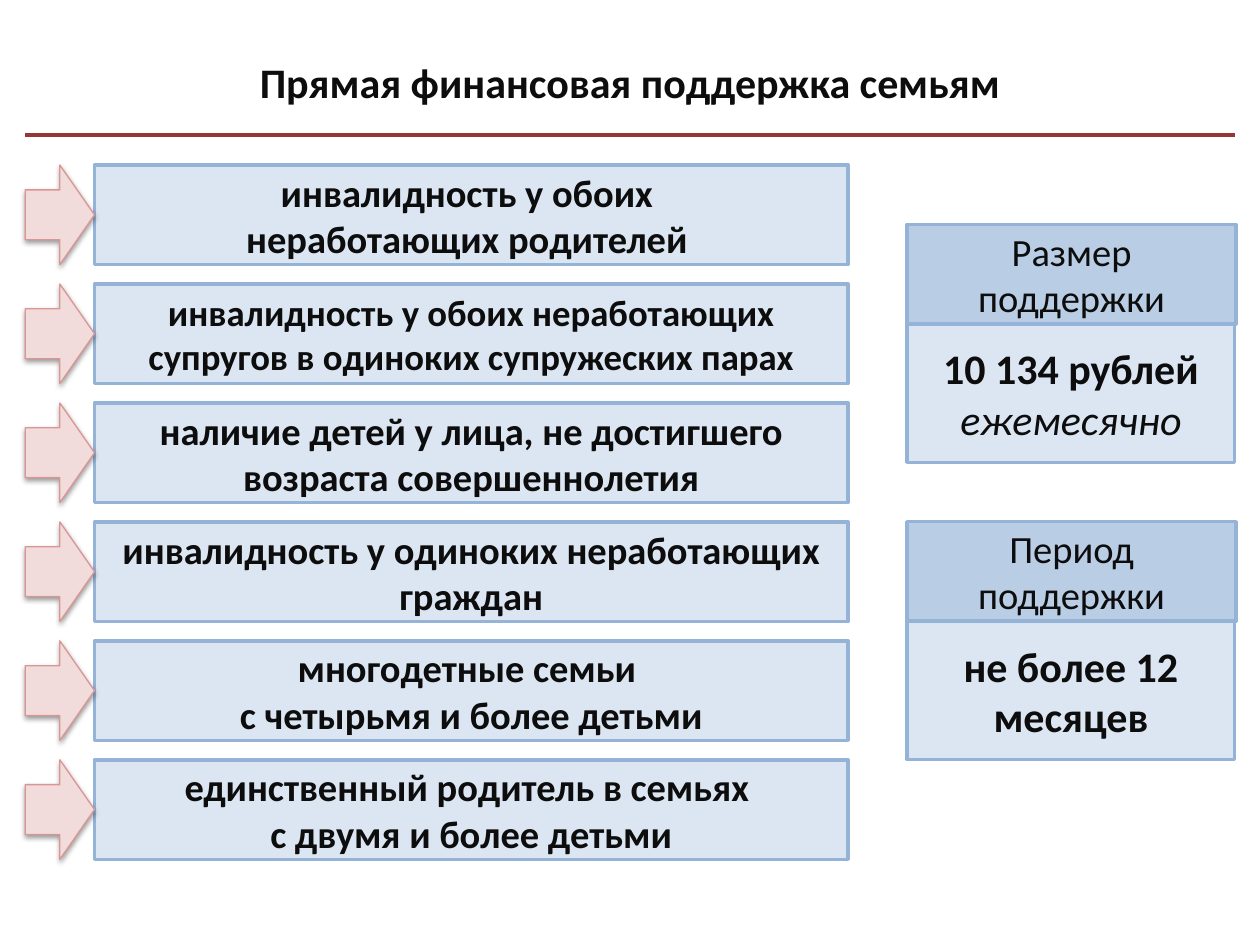
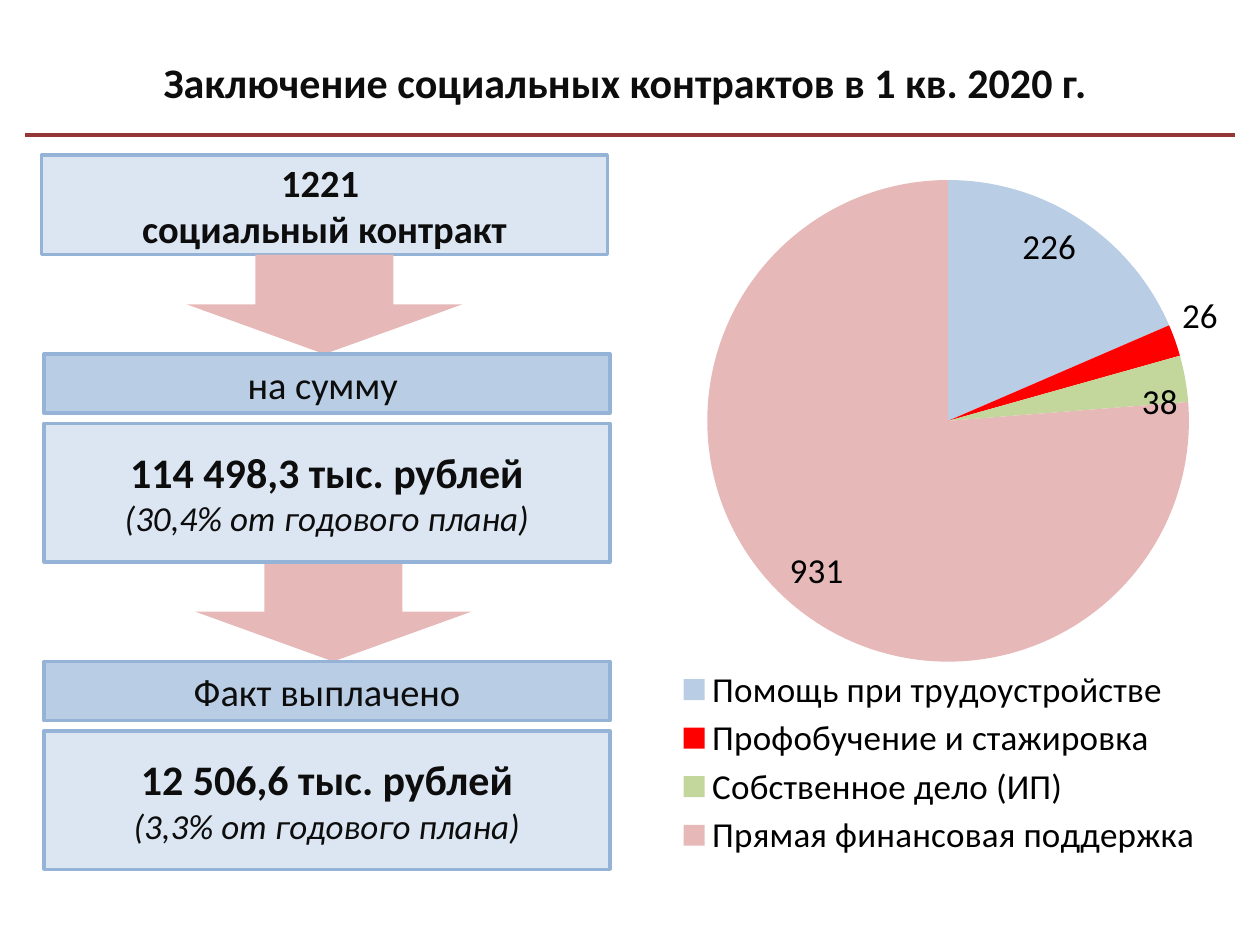
from lxml.etree import SubElement
from pptx import Presentation
from pptx.chart.data import CategoryChartData
from pptx.dml.color import RGBColor
from pptx.enum.chart import XL_CHART_TYPE, XL_LABEL_POSITION, XL_LEGEND_POSITION
from pptx.enum.shapes import MSO_CONNECTOR, MSO_SHAPE
from pptx.enum.text import MSO_ANCHOR, PP_ALIGN
from pptx.oxml import parse_xml
from pptx.oxml.ns import nsdecls, qn
from pptx.util import Inches, Pt

COLORS = {
    "text": "0D0D0D", "chart_text": "000000", "rule": "953735",
    "light_blue": "DCE6F2", "blue": "B9CDE5", "border": "95B3D7",
    "pale_pink": "F2DCDB", "pink_border": "D99694", "pink": "E6B9B8",
    "red": "FF0000", "green": "C3D69B",
}
FORMATS = {
    "title": {"size": Pt(24), "bold": True},
    "reason": {"size": Pt(22), "bold": True},
    "long_reason": {"size": Pt(21), "bold": True},
    "heading": {"size": Pt(22), "bold": False},
    "amount": {"size": Pt(24), "bold": True},
    "period": {"size": Pt(24), "bold": False, "italic": True},
    "share": {"size": Pt(20), "bold": False, "italic": True},
    "chart": {"size": Pt(20), "bold": False},
}
FONT = "Calibri"
COLUMNS, ROWS = 100, 75
BOX_HEIGHT, VALUE_HEIGHT, BAND_HEIGHT = 7.9, 11, 4.7
REASON_TOP, REASON_STEP = 13.1, 9.44


def color(name):
    """Return the named colour of the palette."""
    return RGBColor.from_string(COLORS[name])


class Deck:
    """Hold the shared style and the current slide."""

    def __init__(self):
        """Start an empty presentation of ten by seven and a half inches."""
        self.presentation = Presentation()
        self.presentation.slide_width = Inches(10)
        self.presentation.slide_height = Inches(7.5)
        self.slide = None

    def place(self, *lengths):
        """Turn alternating columns and rows into slide lengths."""
        units = (self.presentation.slide_width / COLUMNS,
                 self.presentation.slide_height / ROWS)
        return [round(length * units[index % 2]) for index, length in enumerate(lengths)]

    def format_font(self, font, style, color_name="text"):
        """Apply a named text format to a font."""
        for name, value in {"name": FONT, **FORMATS[style]}.items():
            setattr(font, name, value)
        font.color.rgb = color(color_name)

    def add_text(self, shape, paragraphs):
        """Fill a shape with centred paragraphs of (text, style) runs."""
        frame = shape.text_frame
        frame.word_wrap = True
        frame.vertical_anchor = MSO_ANCHOR.MIDDLE
        for index, runs in enumerate(paragraphs):
            paragraph = frame.add_paragraph() if index else frame.paragraphs[0]
            paragraph.alignment = PP_ALIGN.CENTER
            for text, style in runs:
                run = paragraph.add_run()
                run.text = text
                self.format_font(run.font, style)

    def add_slide(self, title):
        """Add a slide with its title and the rule below it."""
        self.slide = self.presentation.slides.add_slide(self.presentation.slide_layouts[5])
        placeholder = self.slide.shapes.title
        bounds = self.place(5, 3, 90, 6.9)
        for name, value in zip(("left", "top", "width", "height"), bounds):
            setattr(placeholder, name, value)
        self.add_text(placeholder, [[(title, "title")]])
        rule = self.slide.shapes.add_connector(
            MSO_CONNECTOR.STRAIGHT, *self.place(2, 10.7, 98, 10.7))
        rule.line.color.rgb = color("rule")
        rule.line.width = Pt(2.5)
        SubElement(rule._element.spPr, qn("a:effectLst"))

    def add_shape(self, kind, bounds, fill, border=None, width=2):
        """Add a filled preset shape without a shadow."""
        shape = self.slide.shapes.add_shape(kind, *self.place(*bounds))
        shape.shadow.inherit = False
        shape.fill.solid()
        shape.fill.fore_color.rgb = color(fill)
        if border:
            shape.line.color.rgb = color(border)
            shape.line.width = Pt(width)
        else:
            shape.line.fill.background()
        return shape

    def add_box(self, bounds, paragraphs, fill="light_blue"):
        """Add a bordered text box of the blue family."""
        shape = self.add_shape(MSO_SHAPE.RECTANGLE, bounds, fill, "border")
        self.add_text(shape, paragraphs)

    def add_pointer(self, top):
        """Add a small shaded arrow pointing at a reason."""
        shape = self.add_shape(MSO_SHAPE.RIGHT_ARROW, (2, top, 5.5, BOX_HEIGHT),
                               "pale_pink", "pink_border", 0.75)
        effects = shape._element.spPr.find(qn("a:effectLst"))
        shadow = SubElement(effects, qn("a:outerShdw"), blurRad=str(Pt(3.1)),
                            dist=str(Pt(1.6)), dir=str(90 * 60000), rotWithShape="0")
        shade = SubElement(shadow, qn("a:srgbClr"), val="000000")
        SubElement(shade, qn("a:alpha"), val="38000")

    def add_pie(self, bounds, slices):
        """Add a pie chart of (category, value, colour, label position)."""
        chart_data = CategoryChartData()
        chart_data.categories = [category for category, *_ in slices]
        chart_data.add_series("Контракты", [value for _, value, *_ in slices])
        chart = self.slide.shapes.add_chart(
            XL_CHART_TYPE.PIE, *self.place(*bounds), chart_data).chart
        chart.has_title = False
        self.format_font(chart.font, "chart", "chart_text")
        chart.has_legend = True
        chart.legend.position = XL_LEGEND_POSITION.BOTTOM
        chart.legend.include_in_layout = False
        plot = chart.plots[0]
        plot.vary_by_categories = True
        plot.has_data_labels = True
        plot.data_labels.show_value = True
        plot.data_labels.show_percentage = False
        for index, (_, _, fill, position) in enumerate(slices):
            point = plot.series[0].points[index]
            point.format.fill.solid()
            point.format.fill.fore_color.rgb = color(fill)
            point.data_label.position = position
        chart_element = chart._chartSpace.chart
        self.set_layout(chart_element.plotArea, 0, (0.13, 0.03, 0.81, 0.68), "inner")
        self.set_layout(chart.legend._element, 1, (0.05, 0.71, 0.94, 0.28))

    def set_layout(self, element, index, shares, target=None):
        """Place a part of the chart by shares of the chart's size."""
        for layout in element.findall(qn("c:layout")):
            element.remove(layout)
        layout = parse_xml(f"<c:layout {nsdecls('c')}><c:manualLayout/></c:layout>")
        settings = {"layoutTarget": target} if target else {}
        settings.update({"xMode": "edge", "yMode": "edge"})
        settings.update(zip("xywh", shares))
        for name, value in settings.items():
            SubElement(layout[0], qn(f"c:{name}"), val=str(value))
        element.insert(index, layout)


def build_support(deck):
    """Build the slide on direct financial support."""
    deck.add_slide("Прямая финансовая поддержка семьям")
    reasons = [
        ("reason", "инвалидность у обоих ", "неработающих родителей "),
        ("long_reason", "инвалидность у обоих неработающих супругов в одиноких супружеских парах"),
        ("reason", "наличие детей у лица, не достигшего возраста совершеннолетия"),
        ("reason", "инвалидность у одиноких неработающих граждан"),
        ("reason", "многодетные семьи ", "с четырьмя и более детьми"),
        ("reason", "единственный родитель в семьях ", "с двумя и более детьми"),
    ]
    for index, (style, *lines) in enumerate(reasons):
        top = REASON_TOP + index * REASON_STEP
        deck.add_box((7.5, top, 59.8, BOX_HEIGHT), [[(line, style)] for line in lines])
        deck.add_pointer(top)
    terms = [
        (17.8, "Размер поддержки", [("10 134 рублей ", "amount"), ("ежемесячно", "period")]),
        (41.4, "Период поддержки", [("не более 12 месяцев", "amount")]),
    ]
    for top, heading, runs in terms:
        deck.add_box((72, top, 26.1, BOX_HEIGHT), [[(heading, "heading")]], "blue")
        deck.add_box((72, top + BOX_HEIGHT, 26, VALUE_HEIGHT), [runs])


def build_contracts(deck):
    """Build the slide on social contracts."""
    deck.add_slide("Заключение социальных контрактов в 1 кв. 2020 г. ")
    deck.add_box((3.3, 12.3, 44.9, BOX_HEIGHT),
                 [[("1221 ", "reason")], [("социальный контракт", "reason")]])
    for left, top in ((14.8, 20.2), (15.5, 44.6)):
        deck.add_shape(MSO_SHAPE.DOWN_ARROW, (left, top, 21.9, BOX_HEIGHT), "pink")
    sums = [
        (28.1, "на сумму ", "114 498,3 тыс. рублей", "(30,4% от годового плана)"),
        (52.5, "Факт выплачено", "12 506,6 тыс. рублей", "(3,3% от годового плана)"),
    ]
    for top, heading, amount, share in sums:
        deck.add_box((3.5, top, 44.9, BAND_HEIGHT), [[(heading, "heading")]], "blue")
        deck.add_box((3.5, top + 5.5, 44.9, VALUE_HEIGHT),
                     [[(amount, "amount")], [(share, "share")]])
    inside, outside = XL_LABEL_POSITION.INSIDE_END, XL_LABEL_POSITION.OUTSIDE_END
    deck.add_pie((50, 12.5, 47.2, 56.5), [
        ("Помощь при трудоустройстве", 226, "blue", inside),
        ("Профобучение и стажировка", 26, "red", outside),
        ("Собственное дело (ИП)", 38, "green", inside),
        ("Прямая финансовая поддержка", 931, "pink", inside),
    ])


def main():
    """Build both slides and save the presentation."""
    deck = Deck()
    build_support(deck)
    build_contracts(deck)
    deck.presentation.save("out.pptx")


if __name__ == "__main__":
    main()
